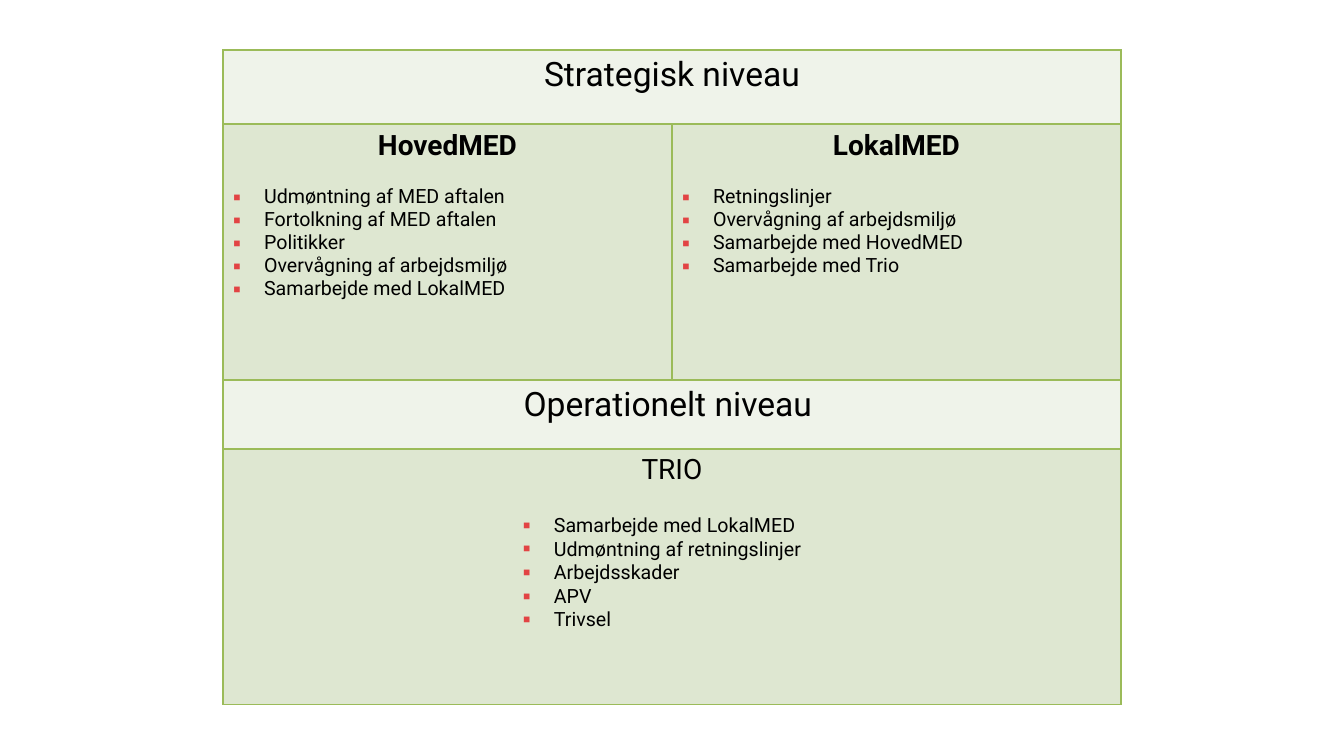
import lxml.etree
import pptx
import pptx.dml.color
import pptx.enum.text
import pptx.oxml.ns
import pptx.util

SCALE = 914400 / 100.8
FONT = "Roboto"
COLORS = {"text": "000000", "band": "EFF3EA", "body": "DEE7D1",
          "border": "9BBB59", "bullet": "E24444"}
ALIGN = pptx.enum.text.PP_ALIGN

HOVED = ["Udmøntning af MED aftalen", "Fortolkning af MED aftalen", "Politikker",
         "Overvågning af arbejdsmiljø", "Samarbejde med LokalMED"]
LOKAL = ["Retningslinjer", "Overvågning af arbejdsmiljø",
         "Samarbejde med HovedMED", "Samarbejde med Trio"]
TRIO = ["Samarbejde med LokalMED", "Udmøntning af retningslinjer",
        "Arbejdsskader", "APV", "Trivsel"]


def px(count):
    return pptx.util.Emu(round(count * SCALE))


def rgb(name):
    return pptx.dml.color.RGBColor.from_string(COLORS[name])


def add_node(parent, tag, **attrs):
    node = lxml.etree.SubElement(parent, pptx.oxml.ns.qn(tag))
    for key, value in attrs.items():
        node.set(key, str(value))
    return node


def style(para, size, bold=False):
    for run in para.runs:
        font = run.font
        font.name = FONT
        font.size = pptx.util.Pt(size)
        font.bold = bold
        font.color.rgb = rgb("text")


def set_head(frame, text, size, bold=False):
    frame.text = text
    para = frame.paragraphs[0]
    para.alignment = ALIGN.CENTER
    style(para, size, bold)


def set_bullet(para, text, align):
    para.text = text
    para.alignment = align
    style(para, 14)
    props = para._p.get_or_add_pPr()
    indent = px(31)
    props.set("marL", str(indent))
    props.set("indent", str(-indent))
    color = add_node(props, "a:buClr")
    add_node(color, "a:srgbClr", val=COLORS["bullet"])
    add_node(props, "a:buFont", typeface=FONT)
    add_node(props, "a:buChar", char="▪")


def set_cell(cell, fill):
    """Draw the four borders, then fill the cell."""
    props = cell._tc.get_or_add_tcPr()
    for side in "LRTB":
        line = add_node(props, "a:ln" + side, w=pptx.util.Pt(1))
        solid = add_node(line, "a:solidFill")
        add_node(solid, "a:srgbClr", val=COLORS["border"])
    cell.fill.solid()
    cell.fill.fore_color.rgb = rgb(fill)


def add_column(cell, title, items):
    frame = cell.text_frame
    set_head(frame, title, 20, True)
    frame.paragraphs[0].space_after = px(23)
    for item in items:
        set_bullet(frame.add_paragraph(), item, ALIGN.LEFT)


def add_levels(slide, left, top, width, heights):
    """Add the table of levels with the given row heights."""
    frame = slide.shapes.add_table(len(heights), 2, px(left), px(top),
                                   px(width), px(sum(heights)))
    table = frame.table
    table.first_row = table.horz_banding = False
    for column in table.columns:
        column.width = px(width / 2)
    for index, height in enumerate(heights):
        table.rows[index].height = px(height)
        for cell in table.rows[index].cells:
            set_cell(cell, "body" if index % 2 else "band")
    wide = [(0, "Strategisk niveau", 24), (2, "Operationelt niveau ", 24),
            (3, "TRIO", 20)]
    for row, text, size in wide:
        cell = table.cell(row, 0)
        cell.merge(table.cell(row, 1))
        set_head(cell.text_frame, text, size)
    add_column(table.cell(1, 0), "HovedMED", HOVED)
    add_column(table.cell(1, 1), "LokalMED", LOKAL)


def add_list(slide, left, top, width, height, items):
    box = slide.shapes.add_textbox(px(left), px(top), px(width), px(height))
    frame = box.text_frame
    frame.word_wrap = True
    frame.auto_size = pptx.enum.text.MSO_AUTO_SIZE.SHAPE_TO_FIT_TEXT
    for index, item in enumerate(items):
        para = frame.add_paragraph() if index else frame.paragraphs[0]
        set_bullet(para, item, ALIGN.JUSTIFY)


def main():
    deck = pptx.Presentation()
    deck.slide_width, deck.slide_height = px(1344), px(756)
    slide = deck.slides.add_slide(deck.slide_layouts[6])
    add_levels(slide, 223, 50, 898, [74, 256, 69, 256])
    add_list(slide, 513, 508, 652, 159, TRIO)
    deck.save("out.pptx")


if __name__ == "__main__":
    main()
